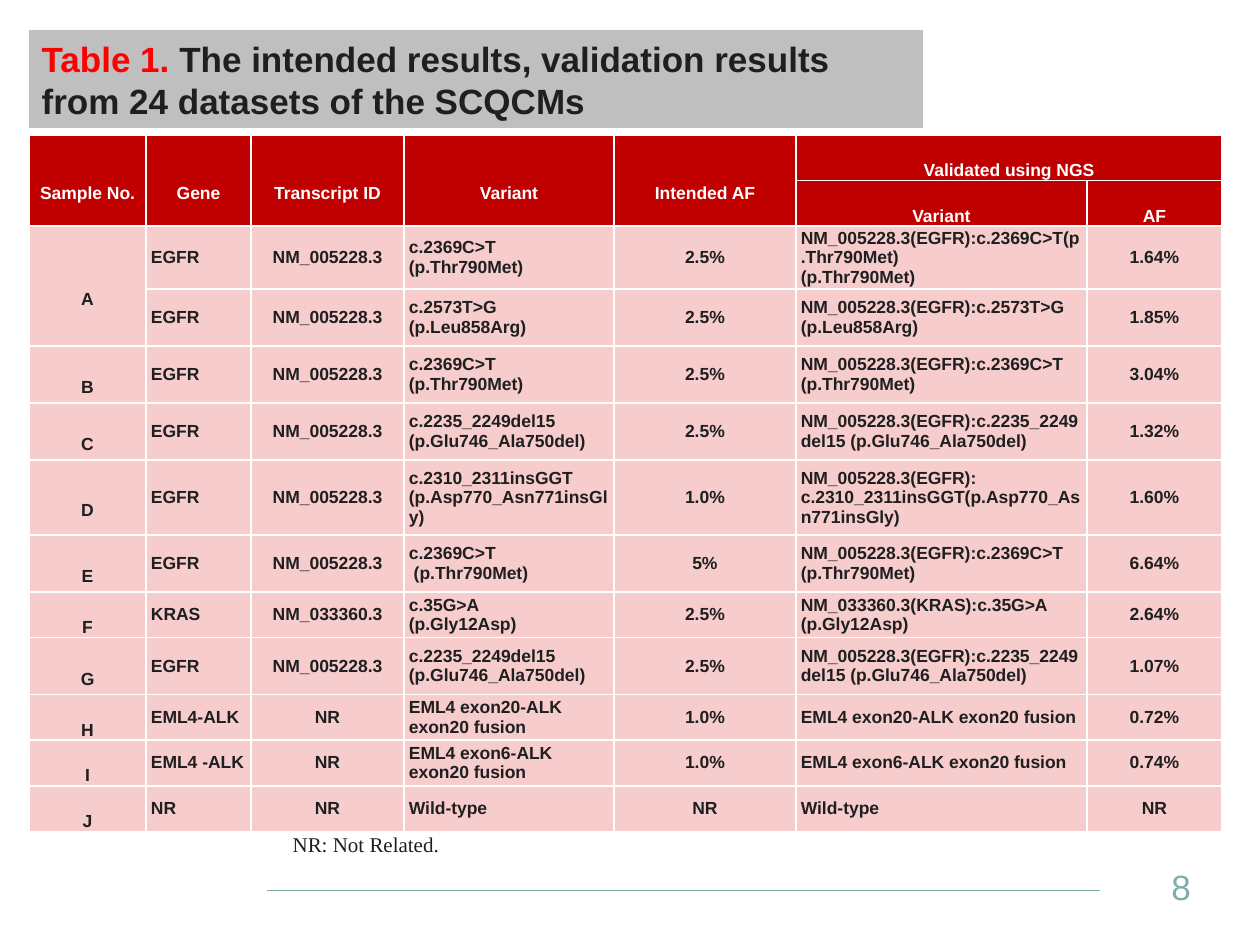
import dataclasses

import lxml.etree
import pptx
import pptx.dml.color
import pptx.enum.shapes
import pptx.enum.text
import pptx.oxml.ns
import pptx.util

ALIGN = pptx.enum.text.PP_ALIGN
ANCHOR = pptx.enum.text.MSO_ANCHOR
FIT = pptx.enum.text.MSO_AUTO_SIZE
EMU_PER_PX = 914400 / 126


@dataclasses.dataclass(frozen=True)
class Theme:
    sans: str = "Arial"
    serif: str = "Times New Roman"
    ink: str = "1F1F1F"
    white: str = "FFFFFF"
    accent: str = "FF0000"
    banner: str = "BFBFBF"
    header: str = "C00000"
    body: str = "F6CCCD"
    footer: str = "81ADA8"
    heading_size: int = 20
    note_size: int = 12
    cell_size: int = 10
    label_spacing: int = 26


def px(length):
    return pptx.util.Emu(round(length * EMU_PER_PX))


def rgb(code):
    return pptx.dml.color.RGBColor.from_string(code)


def assign(target, **values):
    for name, value in values.items():
        setattr(target, name, value)


class SlideBuilder:
    def __init__(self, page, theme):
        self.page = page
        self.theme = theme

    def add_span(self, para, text, size, color, font=None, bold=False):
        span = para.add_run()
        span.text = text
        assign(span.font, name=font or self.theme.sans, size=pptx.util.Pt(size), bold=bold)
        span.font.color.rgb = rgb(color)

    def title(self, parts, left, top, width, height):
        box = self.page.shapes.title
        assign(box, left=px(left), top=px(top), width=px(width), height=px(height))
        box.fill.solid()
        box.fill.fore_color.rgb = rgb(self.theme.banner)
        assign(box.text_frame, auto_size=FIT.NONE, word_wrap=True,
               vertical_anchor=ANCHOR.MIDDLE)
        para = box.text_frame.paragraphs[0]
        para.alignment = ALIGN.LEFT
        for text, color in parts:
            self.add_span(para, text, self.theme.heading_size, color, bold=True)

    def text(self, text, left, top, width, height, size, color, font, **frame_format):
        box = self.page.shapes.add_textbox(px(left), px(top), px(width), px(height))
        assign(box.text_frame, **frame_format)
        self.add_span(box.text_frame.paragraphs[0], text, size, color, font)

    def rule(self, left, right, y):
        line = self.page.shapes.add_connector(
            pptx.enum.shapes.MSO_CONNECTOR.STRAIGHT, px(left), px(y), px(right), px(y))
        line.line.color.rgb = rgb(self.theme.footer)
        line.line.width = pptx.util.Pt(0.5)
        lxml.etree.SubElement(line._element.spPr, pptx.oxml.ns.qn("a:effectLst"))

    def border(self, cell):
        """Draw a white 1 pt line on all four sides of the cell."""
        qn = pptx.oxml.ns.qn
        properties = cell._tc.get_or_add_tcPr()
        for index, side in enumerate(("lnL", "lnR", "lnT", "lnB")):
            edge = lxml.etree.Element(qn(f"a:{side}"), w=str(pptx.util.Pt(1)))
            fill = lxml.etree.SubElement(edge, qn("a:solidFill"))
            lxml.etree.SubElement(fill, qn("a:srgbClr"), val=self.theme.white)
            properties.insert(index, edge)

    def cell(self, cell, text, fill, color, alignment, spacing):
        assign(cell, vertical_anchor=ANCHOR.MIDDLE, margin_left=px(5), margin_right=px(5),
               margin_top=0, margin_bottom=0)
        cell.fill.solid()
        cell.fill.fore_color.rgb = rgb(fill)
        self.border(cell)
        for index, line in enumerate(text.split("\n") if text else ()):
            frame = cell.text_frame
            para = frame.add_paragraph() if index else frame.paragraphs[0]
            assign(para, alignment=alignment, line_spacing=spacing)
            self.add_span(para, line, self.theme.cell_size, color, bold=True)

    def table(self, rows, header_rows, merges, left_columns, left, top, widths, heights):
        theme = self.theme
        table = self.page.shapes.add_table(
            len(rows), len(widths), px(left), px(top),
            px(sum(widths)), px(sum(heights))).table
        table.horz_banding = False
        for column, width in zip(table.columns, widths):
            column.width = px(width)
        for row, height in zip(table.rows, heights):
            row.height = px(height)
        for r, row in enumerate(rows):
            is_header = r < header_rows
            fill, color = (theme.header, theme.white) if is_header else (theme.body, theme.ink)
            for c, text in enumerate(row):
                is_left = c in left_columns and not is_header
                is_label = is_header or c == 0
                self.cell(table.cell(r, c), text, fill, color,
                          ALIGN.LEFT if is_left else ALIGN.CENTER,
                          pptx.util.Pt(theme.label_spacing) if is_label else None)
        for first, last in merges:
            table.cell(*first).merge(table.cell(*last))


EGFR = "NM_005228.3"
T790M = "c.2369C>T\n(p.Thr790Met)"
T790M_NGS = "NM_005228.3(EGFR):c.2369C>T (p.Thr790Met)"
DEL15 = "c.2235_2249del15 (p.Glu746_Ala750del)"
DEL15_NGS = "NM_005228.3(EGFR):c.2235_2249del15 (p.Glu746_Ala750del)"
FUSION_20 = "EML4 exon20-ALK exon20 fusion"
FUSION_6 = "EML4 exon6-ALK exon20 fusion"

ROWS = [
    ("Sample No.", "Gene", "Transcript ID", "Variant", "Intended AF",
     "Validated using NGS", ""),
    ("", "", "", "", "", "Variant", "AF"),
    ("A", "EGFR", EGFR, T790M, "2.5%",
     "NM_005228.3(EGFR):c.2369C>T(p.Thr790Met)\n(p.Thr790Met)", "1.64%"),
    ("", "EGFR", EGFR, "c.2573T>G\n(p.Leu858Arg)", "2.5%",
     "NM_005228.3(EGFR):c.2573T>G (p.Leu858Arg)", "1.85%"),
    ("B", "EGFR", EGFR, T790M, "2.5%", T790M_NGS, "3.04%"),
    ("C", "EGFR", EGFR, DEL15, "2.5%", DEL15_NGS, "1.32%"),
    ("D", "EGFR", EGFR, "c.2310_2311insGGT\n(p.Asp770_Asn771insGly)", "1.0%",
     "NM_005228.3(EGFR): c.2310_2311insGGT(p.Asp770_Asn771insGly)", "1.60%"),
    ("E", "EGFR", EGFR, "c.2369C>T\n (p.Thr790Met)", "5%", T790M_NGS, "6.64%"),
    ("F", "KRAS", "NM_033360.3", "c.35G>A\n(p.Gly12Asp)", "2.5%",
     "NM_033360.3(KRAS):c.35G>A (p.Gly12Asp)", "2.64%"),
    ("G", "EGFR", EGFR, DEL15, "2.5%", DEL15_NGS, "1.07%"),
    ("H", "EML4-ALK", "NR", FUSION_20, "1.0%", FUSION_20, "0.72%"),
    ("I", "EML4 -ALK", "NR", FUSION_6, "1.0%", FUSION_6, "0.74%"),
    ("J", "NR", "NR", "Wild-type", "NR", "Wild-type", "NR"),
]
MERGES = [((0, column), (1, column)) for column in range(5)]
MERGES += [((0, 5), (0, 6)), ((2, 0), (3, 0))]
WIDTHS = [117, 105, 153, 210, 182, 291, 135]
SHORT, MEDIUM = 45, 57
HEIGHTS = [SHORT, SHORT, 62, MEDIUM, MEDIUM, MEDIUM, 75, MEDIUM,
           SHORT, MEDIUM, SHORT, SHORT, SHORT]


def main():
    theme = Theme()
    deck = pptx.Presentation()
    assign(deck, slide_width=px(1260), slide_height=px(945))
    slide = SlideBuilder(deck.slides.add_slide(deck.slide_layouts[5]), theme)
    slide.rule(267, 1100, 890)
    slide.text("8", 1159, 861, 101, 50, theme.heading_size, theme.footer, theme.sans,
               word_wrap=True, vertical_anchor=ANCHOR.MIDDLE)
    slide.table(ROWS, 2, MERGES, (1, 3, 5), 29, 135, WIDTHS, HEIGHTS)
    slide.title([("Table 1. ", theme.accent),
                 ("The intended results, validation results from 24 datasets of the SCQCMs",
                  theme.ink)], 29, 30, 894, 98)
    slide.text(" NR: Not Related.", 275, 825, 184, 38, theme.note_size, theme.ink, theme.serif,
               word_wrap=False, auto_size=FIT.SHAPE_TO_FIT_TEXT)
    deck.save("out.pptx")


if __name__ == "__main__":
    main()
